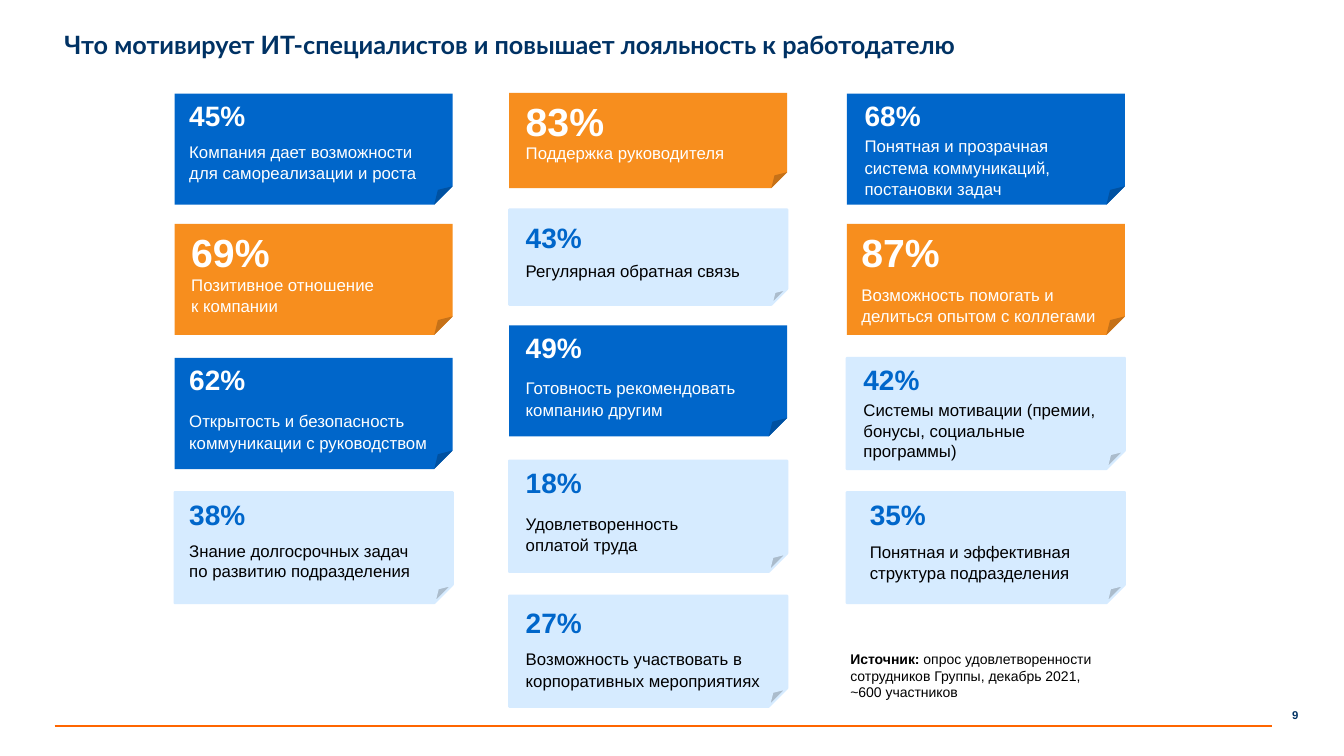
from pptx import Presentation
from pptx.dml.color import RGBColor
from pptx.enum.shapes import MSO_CONNECTOR, MSO_SHAPE
from pptx.enum.text import MSO_ANCHOR, PP_ALIGN
from pptx.oxml import parse_xml
from pptx.util import Cm, Pt

NAVY = RGBColor(0x00, 0x32, 0x64)
BLUE = RGBColor(0x00, 0x66, 0xCA)
ORANGE = RGBColor(0xF7, 0x8E, 0x1E)
PALE = RGBColor(0xD6, 0xEB, 0xFF)
RULE_ORANGE = RGBColor(0xFF, 0x66, 0x00)
WHITE = RGBColor(0xFF, 0xFF, 0xFF)
BLACK = RGBColor(0x00, 0x00, 0x00)

CARD_WIDTH = 7.01
TALL, LOW = 2.8, 2.4

# Column left, then cards: top, height, fill, percent, percent offset,
# text inset, caption, caption offset, caption width, line spacing
COLUMNS = [
    (4.4, [
        (2.36, TALL, BLUE, "45%", 0, 0.12,
         "Компания дает возможности для самореализации и роста", 1.04, 6.5, 1.07),
        (5.64, TALL, ORANGE, "69%", 0, 0.17,
         "Позитивное отношение к компании", 1.12, 5.36, 1.07),
        (9.02, TALL, BLUE, "62%", 0, 0.12,
         "Открытость и безопасность коммуникации с руководством", 1.17, 6.7, 1.07),
        (12.4, TALL, PALE, "38%", 0, 0.12,
         "Знание долгосрочных задач по развитию подразделения", 1.09, 6.2, 1),
    ]),
    (12.83, [
        (2.34, LOW, ORANGE, "83%", 0, 0.17,
         "Поддержка руководителя", 1.14, 6.35, 1),
        (5.28, LOW, PALE, "43%", 0.15, 0.17,
         "Регулярная обратная связь", 1.14, 6.25, 1.07),
        (8.2, TALL, BLUE, "49%", 0, 0.17,
         "Готовность рекомендовать компанию другим", 1.17, 6.25, 1.07),
        (11.61, TALL, PALE, "18%", 0, 0.17,
         "Удовлетворенность оплатой труда", 1.17, 5.74, 1.07),
        (15.01, TALL, PALE, "27%", 0.13, 0.17,
         "Возможность участвовать в корпоративных мероприятиях", 1.19, 6.7, 1.07),
    ]),
    (21.34, [
        (2.36, TALL, BLUE, "68%", 0, 0.2,
         "Понятная и прозрачная система коммуникаций, постановки задач",
         0.91, 5.61, 1.07),
        (5.64, TALL, ORANGE, "87%", 0, 0.12,
         "Возможность помогать и делиться опытом с коллегами", 1.37, 7.01, 1.07),
        (9.02, TALL, PALE, "42%", 0, 0.17,
         "Системы мотивации (премии, бонусы, социальные программы)",
         0.94, 6.4, 1),
        (12.4, TALL, PALE, "35%", 0, 0.33,
         "Понятная и эффективная структура подразделения", 1.09, 6.78, 1.07),
    ]),
]


def style(font, size, color, bold=False, name="Arial"):
    font.name = name
    font.size = Pt(size)
    font.bold = bold
    font.color.rgb = color


def add_text(slide, left, top, width, height, text, size, color, bold=False):
    """Add a wrapping text box and return its only paragraph."""
    box = slide.shapes.add_textbox(Cm(left), Cm(top), Cm(width), Cm(height))
    box.text_frame.word_wrap = True
    paragraph = box.text_frame.paragraphs[0]
    paragraph.text = text
    style(paragraph.runs[0].font, size, color, bold)
    return paragraph


presentation = Presentation()
presentation.slide_width = Cm(33.87)
presentation.slide_height = Cm(19.05)
slide = presentation.slides.add_slide(presentation.slide_layouts[5])

# Title
title = slide.shapes.title
title.left, title.top, title.width, title.height = Cm(1.37), Cm(0.56), Cm(25.25), Cm(1.12)
title.text_frame.text = "Что мотивирует ИТ-специалистов и повышает лояльность к работодателю"
title.text_frame.vertical_anchor = MSO_ANCHOR.MIDDLE
title_paragraph = title.text_frame.paragraphs[0]
title_paragraph.alignment = PP_ALIGN.LEFT
style(title_paragraph.runs[0].font, 18, NAVY, True, "Lato")

# Cards
for left, cards in COLUMNS:
    for (top, height, fill, percent, percent_offset, inset,
         caption, caption_offset, caption_width, spacing) in cards:
        card = slide.shapes.add_shape(
            MSO_SHAPE.FOLDED_CORNER, Cm(left), Cm(top), Cm(CARD_WIDTH), Cm(height))
        card.shadow.inherit = False
        card.fill.solid()
        card.fill.fore_color.rgb = fill
        if fill == PALE:
            card.line.color.rgb = PALE
            card.line.width = Pt(1.5)
            percent_color, caption_color = BLUE, BLACK
        else:
            card.line.fill.background()
            percent_color = caption_color = WHITE

        paragraph = add_text(slide, left + inset, top + caption_offset,
                             caption_width, 1.32, caption, 12, caption_color)
        paragraph.line_spacing = spacing
        add_text(slide, left + inset, top + percent_offset, 2.8, 1.12,
                 percent, 28 if fill == ORANGE else 20, percent_color, True)

# Source
source = add_text(slide, 21.18, 16.26, 7.57, 1.55, "Источник: ", 10, BLACK, True)
survey = source.add_run()
survey.text = "опрос удовлетворенности сотрудников Группы, декабрь 2021,"
source.add_line_break()
sample = source.add_run()
sample.text = "~600 участников"
for run in (survey, sample):
    style(run.font, 10, BLACK)

# Footer
rule = slide.shapes.add_connector(
    MSO_CONNECTOR.STRAIGHT, Cm(1.38), Cm(18.3), Cm(32.05), Cm(18.3))
rule.line.color.rgb = RULE_ORANGE
rule.line.width = Pt(1.5)
rule._element.spPr.append(parse_xml(
    '<a:effectLst xmlns:a="http://schemas.openxmlformats.org/drawingml/2006/main"/>'))
page_number = add_text(slide, 27.23, 17.72, 5.74, 0.6, "9", 8.1, NAVY, True)
page_number.alignment = PP_ALIGN.RIGHT

presentation.save("out.pptx")
